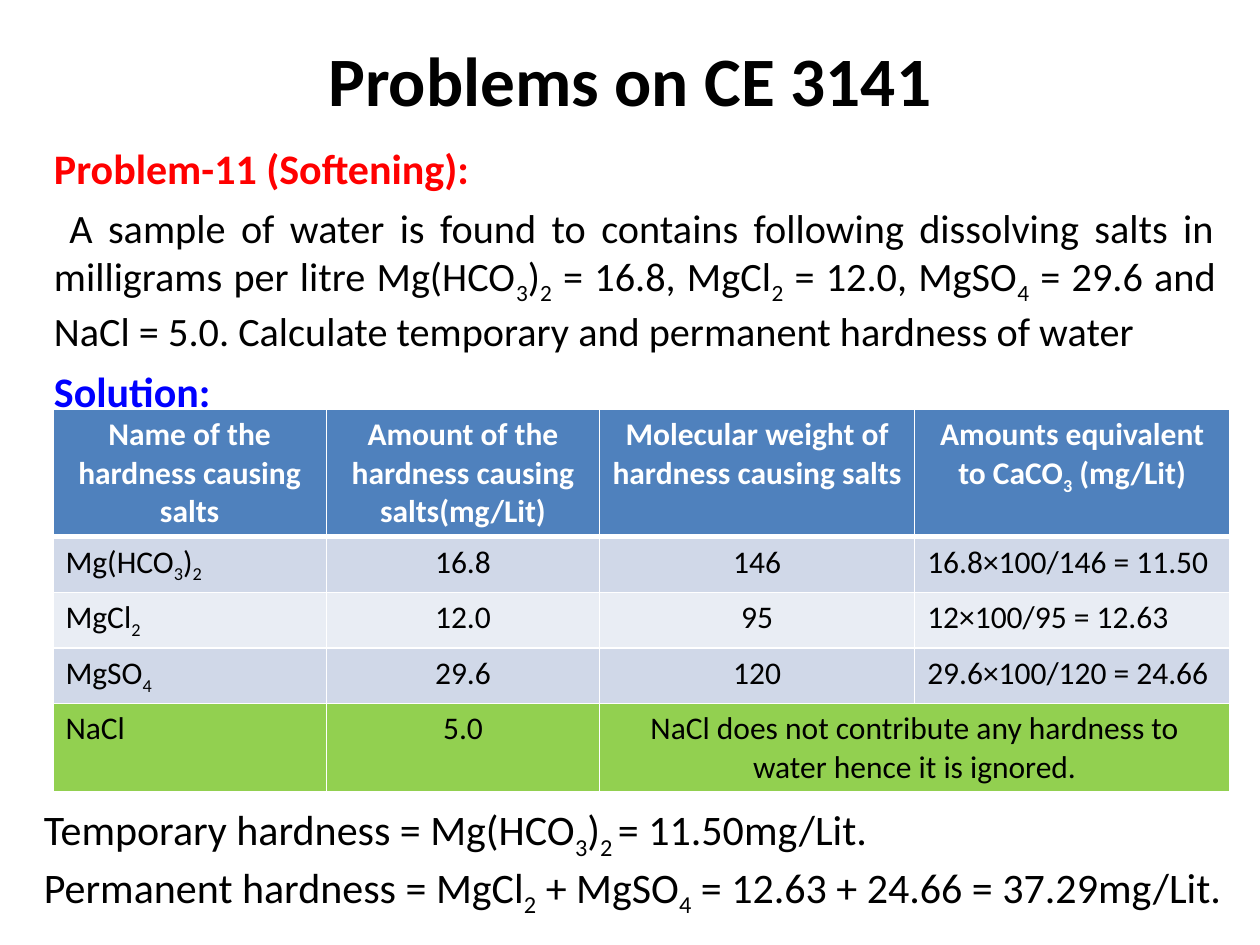
"""Build a slide with a worked water-hardness problem."""

from dataclasses import dataclass

from lxml import etree
from pptx import Presentation
from pptx.dml.color import RGBColor
from pptx.enum.text import MSO_ANCHOR, MSO_AUTO_SIZE, PP_ALIGN
from pptx.oxml.ns import qn
from pptx.util import Inches, Pt

LEFT, CENTER, JUSTIFY = PP_ALIGN.LEFT, PP_ALIGN.CENTER, PP_ALIGN.JUSTIFY
MIDDLE = MSO_ANCHOR.MIDDLE
NO_AUTOFIT = MSO_AUTO_SIZE.NONE

BLACK = RGBColor(0x00, 0x00, 0x00)
WHITE = RGBColor(0xFF, 0xFF, 0xFF)
RED = RGBColor(0xFF, 0x00, 0x00)
BLUE = RGBColor(0x00, 0x00, 0xFF)
HEADER_BLUE = RGBColor(0x4F, 0x81, 0xBD)
DARK_BAND = RGBColor(0xD0, 0xD8, 0xE8)
LIGHT_BAND = RGBColor(0xE9, 0xED, 0xF4)
GREEN = RGBColor(0x92, 0xD0, 0x50)

FONT_NAME = "Calibri"
TITLE_ONLY_LAYOUT = 5
SUBSCRIPT_MARK = "_"
SUBSCRIPT_BASELINE = "-25000"


@dataclass(frozen=True)
class Line:
    """A paragraph whose subscripts stand between underscores."""

    text: str
    size: float
    color: RGBColor = BLACK
    bold: bool = False
    align: PP_ALIGN = LEFT
    space_before: float = 0


@dataclass(frozen=True)
class Row:
    """A table row with its fill and height in inches."""

    texts: tuple[str, ...]
    fill: RGBColor
    height: float


PROBLEM = (
    Line("Problem-11 (Softening): ", 24, RED, True, JUSTIFY, 6),
    Line(
        " A sample of water is found to contains following dissolving salts in "
        "milligrams per litre Mg(HCO_3_)_2_ = 16.8, MgCl_2_ = 12.0, "
        "MgSO_4_ = 29.6 and NaCl = 5.0. Calculate temporary and permanent "
        "hardness of water",
        23, align=JUSTIFY, space_before=6,
    ),
    Line("Solution:", 24, BLUE, True, JUSTIFY, 6),
)
RESULTS = (
    Line("Temporary hardness = Mg(HCO_3_)_2 _= 11.50mg/Lit.", 24),
    Line("Permanent hardness = MgCl_2_ + MgSO_4_ = 12.63 + 24.66 = 37.29mg/Lit.", 24),
)
COLUMN_WIDTHS = (2.17, 2.17, 2.5, 2.5)
ROWS = (
    Row(
        (
            "Name of the hardness causing salts",
            "Amount of the hardness causing salts(mg/Lit)",
            "Molecular weight of hardness causing salts",
            "Amounts equivalent to CaCO_3_ (mg/Lit)",
        ),
        HEADER_BLUE, 1.01,
    ),
    Row(("Mg(HCO_3_)_2", "16.8", "146", "16.8×100/146 = 11.50"), DARK_BAND, 0.44),
    Row(("MgCl_2", "12.0", "95", "12×100/95 = 12.63"), LIGHT_BAND, 0.44),
    Row(("MgSO_4", "29.6", "120", "29.6×100/120 = 24.66"), DARK_BAND, 0.44),
    Row(
        ("NaCl", "5.0",
         "NaCl does not contribute any hardness to water hence it is ignored."),
        GREEN, 0.7,
    ),
)


def write_line(paragraph, line: Line) -> None:
    """Write one line, lowering the marked subscripts."""
    paragraph.alignment = line.align
    paragraph.space_before = Pt(line.space_before)
    font = paragraph.font
    font.name, font.size, font.bold = FONT_NAME, Pt(line.size), line.bold
    font.color.rgb = line.color
    for index, part in enumerate(line.text.split(SUBSCRIPT_MARK)):
        if part:
            run = paragraph.add_run()
            run.text = part
            if index % 2:
                run.font._element.set("baseline", SUBSCRIPT_BASELINE)


def add_text(slide, lines: tuple[Line, ...], left: float, top: float,
             width: float, height: float) -> None:
    """Add a wrapping text box that holds the lines."""
    box = slide.shapes.add_textbox(
        Inches(left), Inches(top), Inches(width), Inches(height))
    frame = box.text_frame
    frame.word_wrap = True
    for index, line in enumerate(lines):
        paragraph = frame.add_paragraph() if index else frame.paragraphs[0]
        write_line(paragraph, line)


def add_borders(cell, bottom_width: float) -> None:
    """Give a cell white borders with its own bottom width."""
    properties = cell._tc.get_or_add_tcPr()
    for side, width in (("L", 1), ("R", 1), ("T", 1), ("B", bottom_width)):
        border = etree.SubElement(properties, qn(f"a:ln{side}"), w=str(Pt(width)))
        fill = etree.SubElement(border, qn("a:solidFill"))
        etree.SubElement(fill, qn("a:srgbClr"), val=str(WHITE))


def add_salt_table(slide) -> None:
    """Add the table of salts and their equivalents."""
    table = slide.shapes.add_table(
        len(ROWS), len(COLUMN_WIDTHS), Inches(0.42), Inches(3.25),
        Inches(sum(COLUMN_WIDTHS)), Inches(sum(row.height for row in ROWS)),
    ).table
    for column, width in zip(table.columns, COLUMN_WIDTHS):
        column.width = Inches(width)
    last_row = len(ROWS) - 1
    table.cell(last_row, 2).merge(table.cell(last_row, 3))
    for row_index, row in enumerate(ROWS):
        table.rows[row_index].height = Inches(row.height)
        is_header = row_index == 0
        for column_index in range(len(COLUMN_WIDTHS)):
            cell = table.cell(row_index, column_index)
            add_borders(cell, 3 if is_header else 1)
            cell.fill.solid()
            cell.fill.fore_color.rgb = row.fill
            if column_index < len(row.texts):
                centered = is_header or column_index in (1, 2)
                write_line(cell.text_frame.paragraphs[0], Line(
                    row.texts[column_index], 18, WHITE if is_header else BLACK,
                    is_header, CENTER if centered else LEFT))


def main() -> None:
    """Build and save the slide."""
    presentation = Presentation()
    presentation.slide_width, presentation.slide_height = Inches(10), Inches(7.5)
    slide = presentation.slides.add_slide(
        presentation.slide_layouts[TITLE_ONLY_LAYOUT])
    title = slide.shapes.title
    title.left, title.top = Inches(0.75), Inches(0.25)
    title.width, title.height = Inches(8.5), Inches(0.75)
    title.text_frame.vertical_anchor = MIDDLE
    title.text_frame.auto_size = NO_AUTOFIT
    write_line(title.text_frame.paragraphs[0],
               Line("Problems on CE 3141", 39.6, bold=True, align=CENTER))
    add_text(slide, PROBLEM, 0.33, 1.08, 9.42, 2.25)
    add_salt_table(slide)
    add_text(slide, RESULTS, 0.25, 6.33, 9.58, 0.91)
    presentation.save("out.pptx")


if __name__ == "__main__":
    main()
